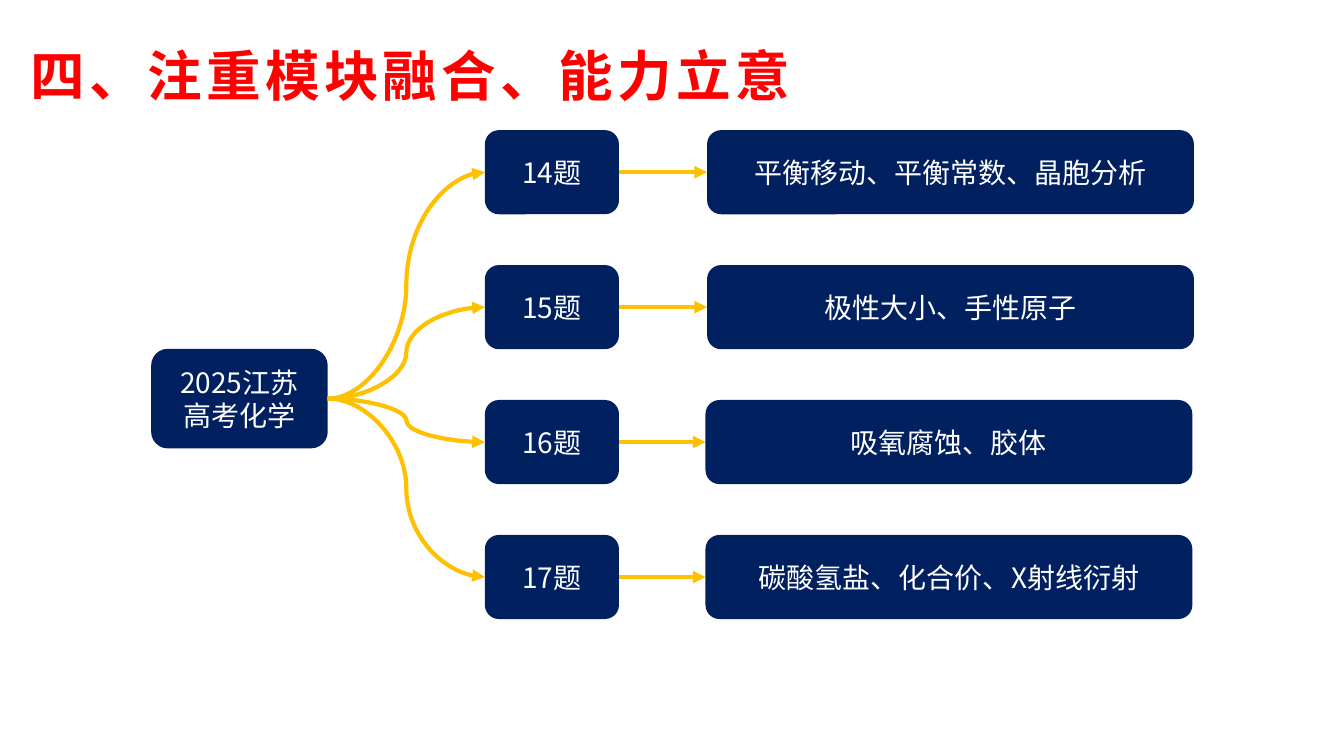
from lxml import etree
from pptx import Presentation
from pptx.dml.color import RGBColor
from pptx.enum.shapes import MSO_CONNECTOR, MSO_SHAPE
from pptx.enum.text import MSO_ANCHOR, MSO_AUTO_SIZE, PP_ALIGN
from pptx.oxml.ns import qn
from pptx.util import Cm, Pt

ROUNDED = MSO_SHAPE.ROUNDED_RECTANGLE
CURVE = MSO_CONNECTOR.CURVE
MIDDLE = MSO_ANCHOR.MIDDLE
NO_FIT = MSO_AUTO_SIZE.NONE
LEFT, CENTER = PP_ALIGN.LEFT, PP_ALIGN.CENTER

NAVY = RGBColor(0x00, 0x20, 0x60)
GOLD = RGBColor(0xFF, 0xC0, 0x00)
RED = RGBColor(0xFF, 0x00, 0x00)
WHITE = RGBColor(0xFF, 0xFF, 0xFF)
FONT = "Noto Sans CJK SC"

# Connection sites of a box
LEFT_SIDE, RIGHT_SIDE = 1, 3

# Layout of the question rows, in centimetres
ROW_TOP, ROW_STEP, ROW_HEIGHT = 3.28, 3.4, 2.12
QUESTION_LEFT, QUESTION_WIDTH = 12.22, 3.38
TOPIC_WIDTH = 12.27

# Question, its topics, left edge of the topics box
ROWS = [
    ("14题", "平衡移动、平衡常数、晶胞分析", 17.82),
    ("15题", "极性大小、手性原子", 17.82),
    ("16题", "吸氧腐蚀、胶体", 17.78),
    ("17题", "碳酸氢盐、化合价、X射线衍射", 17.78),
]


def write_text(shape, text, size=20, color=WHITE, bold=False, align=CENTER, spacing=0):
    """Fill a shape with text, one paragraph a line."""
    frame = shape.text_frame
    frame.word_wrap = True
    frame.auto_size = NO_FIT
    frame.vertical_anchor = MIDDLE
    frame.text = text
    for para in frame.paragraphs:
        para.alignment = align
        for span in para.runs:
            span.font.size = Pt(size)
            span.font.bold = bold
            span.font.color.rgb = color
            span.font.name = FONT
            properties = span.font._element
            properties.set("lang", "zh-CN")
            if spacing:
                properties.set("spc", str(spacing * 100))
            latin = properties.find(qn("a:latin"))
            east_asian = etree.Element(qn("a:ea"), typeface=FONT)
            latin.addnext(east_asian)


def add_box(page, text, left, top, width, height):
    box = page.shapes.add_shape(ROUNDED, Cm(left), Cm(top), Cm(width), Cm(height))
    box.shadow.inherit = False
    box.fill.solid()
    box.fill.fore_color.rgb = NAVY
    box.line.fill.background()
    write_text(box, text)
    return box


def add_arrow(page, source, target):
    """Curve from the right side of one box to the left side of another."""
    arrow = page.shapes.add_connector(CURVE, 0, 0, 0, 0)
    arrow.begin_connect(source, RIGHT_SIDE)
    arrow.end_connect(target, LEFT_SIDE)
    arrow.line.color.rgb = GOLD
    arrow.line.width = Pt(3)
    etree.SubElement(arrow.line._get_or_add_ln(), qn("a:tailEnd"), type="triangle")
    etree.SubElement(arrow._element.spPr, qn("a:effectLst"))


def add_title(page, text):
    title = page.shapes.title
    title.left, title.top = Cm(0.51), Cm(0.38)
    title.width, title.height = Cm(20.78), Cm(3.02)
    write_text(title, text, size=39, color=RED, bold=True, align=LEFT, spacing=3)


def main():
    deck = Presentation()
    deck.slide_width, deck.slide_height = Cm(33.87), Cm(19.05)
    page = deck.slides.add_slide(deck.slide_layouts.get_by_name("Title Only"))
    add_title(page, "四、注重模块融合、能力立意")

    # Root of the tree
    exam = add_box(page, "2025江苏\n高考化学", 3.81, 8.79, 4.45, 2.51)

    # One branch for each question
    for index, (question_text, topic_text, topic_left) in enumerate(ROWS):
        top = ROW_TOP + index * ROW_STEP
        question = add_box(page, question_text, QUESTION_LEFT, top, QUESTION_WIDTH, ROW_HEIGHT)
        topic = add_box(page, topic_text, topic_left, top, TOPIC_WIDTH, ROW_HEIGHT)
        add_arrow(page, exam, question)
        add_arrow(page, question, topic)

    deck.save("out.pptx")


if __name__ == "__main__":
    main()
